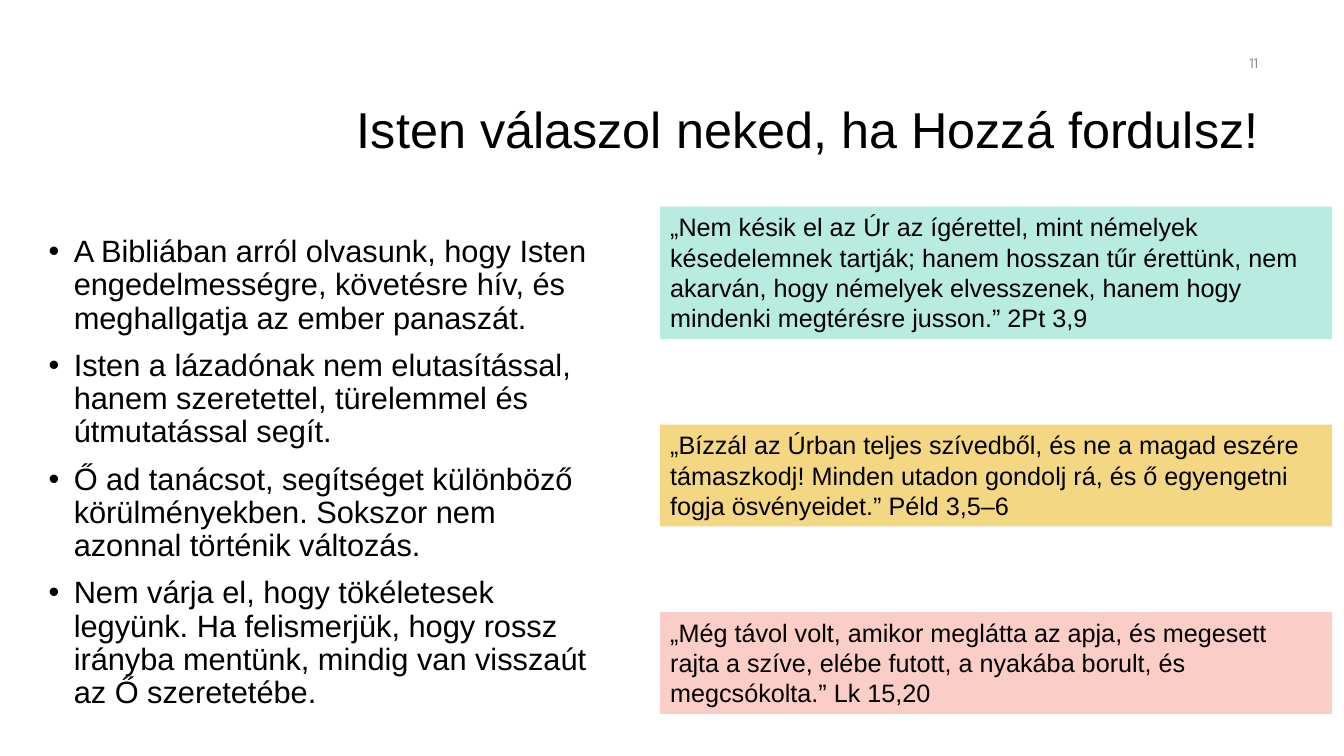
from lxml import etree
from pptx import Presentation
from pptx.dml.color import RGBColor
from pptx.enum import shapes, text
from pptx.oxml.ns import qn
from pptx.util import Pt

BLACK = RGBColor(0x00, 0x00, 0x00)
GREY = RGBColor(0x8C, 0x8C, 0x8C)
MINT = RGBColor(0xB9, 0xEC, 0xE1)
GOLD = RGBColor(0xF4, 0xD7, 0x83)
PINK = RGBColor(0xFB, 0xCD, 0xC7)

LEFT, RIGHT = text.PP_ALIGN.LEFT, text.PP_ALIGN.RIGHT
TOP, MIDDLE = text.MSO_ANCHOR.TOP, text.MSO_ANCHOR.MIDDLE

TITLE = "Isten válaszol neked, ha Hozzá fordulsz!"
POINTS = [
    "A Bibliában arról olvasunk, hogy Isten engedelmességre, követésre hív, "
    "és meghallgatja az ember panaszát.",
    "Isten a lázadónak nem elutasítással, hanem szeretettel, türelemmel "
    "és útmutatással segít.",
    "Ő ad tanácsot, segítséget különböző körülményekben. "
    "Sokszor nem azonnal történik változás.",
    "Nem várja el, hogy tökéletesek legyünk. Ha felismerjük, hogy rossz "
    "irányba mentünk, mindig van visszaút az Ő szeretetébe.",
]
# Top, height, fill and wording of each verse
VERSES = [
    (147.6, 94.5, MINT,
     "„Nem késik el az Úr az ígérettel, mint némelyek késedelemnek tartják; "
     "hanem hosszan tűr érettünk, nem akarván, hogy némelyek elvesszenek, "
     "hanem hogy mindenki megtérésre jusson.” 2Pt 3,9"),
    (303.3, 72.7, GOLD,
     "„Bízzál az Úrban teljes szívedből, és ne a magad eszére támaszkodj! "
     "Minden utadon gondolj rá, és ő egyengetni fogja ösvényeidet.” Péld 3,5–6"),
    (437.2, 72.7, PINK,
     "„Még távol volt, amikor meglátta az apja, és megesett rajta a szíve, "
     "elébe futott, a nyakába borult, és megcsókolta.” Lk 15,20"),
]


def apply(obj, form):
    for name, value in form.items():
        setattr(obj, name, value)


def place(shape, left, top, width, height):
    apply(shape, {"left": Pt(left), "top": Pt(top),
                  "width": Pt(width), "height": Pt(height)})


def write(shape, lines, size, font="Arial", color=BLACK, anchor=TOP,
          align=LEFT, pitch=1.0, gap=0, bullet=False):
    frame = shape.text_frame
    apply(frame, {"word_wrap": True, "vertical_anchor": anchor,
                  "auto_size": text.MSO_AUTO_SIZE.NONE})
    for i, line in enumerate(lines):
        para = frame.add_paragraph() if i else frame.paragraphs[0]
        if bullet:
            mark(para)
        apply(para, {"alignment": align, "line_spacing": pitch,
                     "space_before": Pt(gap if i else 0)})
        run = para.add_run()
        run.text = line
        apply(run.font, {"name": font, "size": Pt(size)})
        run.font.color.rgb = color


def mark(para):
    props = para._p.get_or_add_pPr()
    props.set("marL", str(Pt(18)))
    props.set("indent", str(Pt(-18)))
    etree.SubElement(props, qn("a:buFont")).set("typeface", "Arial")
    etree.SubElement(props, qn("a:buChar")).set("char", "•")


def verse(slide, top, height, fill, words):
    card = slide.shapes.add_shape(shapes.MSO_SHAPE.RECTANGLE, Pt(471.6),
                                  Pt(top), Pt(480), Pt(height))
    card.shadow.inherit = False
    card.fill.solid()
    card.fill.fore_color.rgb = fill
    card.line.fill.background()
    write(card, [words], 18)


def main():
    deck = Presentation()
    apply(deck, {"slide_width": Pt(960), "slide_height": Pt(540)})
    slide = deck.slides.add_slide(deck.slide_layouts[1])

    # Title and list
    title, body = slide.placeholders
    place(title, 228, 60.5, 678.5, 68.5)
    write(title, [TITLE], 36, anchor=MIDDLE, align=RIGHT, pitch=0.9)
    place(body, 27.5, 165, 401.5, 361.5)
    write(body, POINTS, 22, pitch=0.9, gap=10, bullet=True)

    # Page number
    page = slide.shapes.add_textbox(Pt(690), Pt(30), Pt(216), Pt(29))
    write(page, ["11"], 10.5, "League Spartan", GREY, MIDDLE, RIGHT)

    # Verses
    for item in VERSES:
        verse(slide, *item)

    deck.save("out.pptx")


if __name__ == "__main__":
    main()
